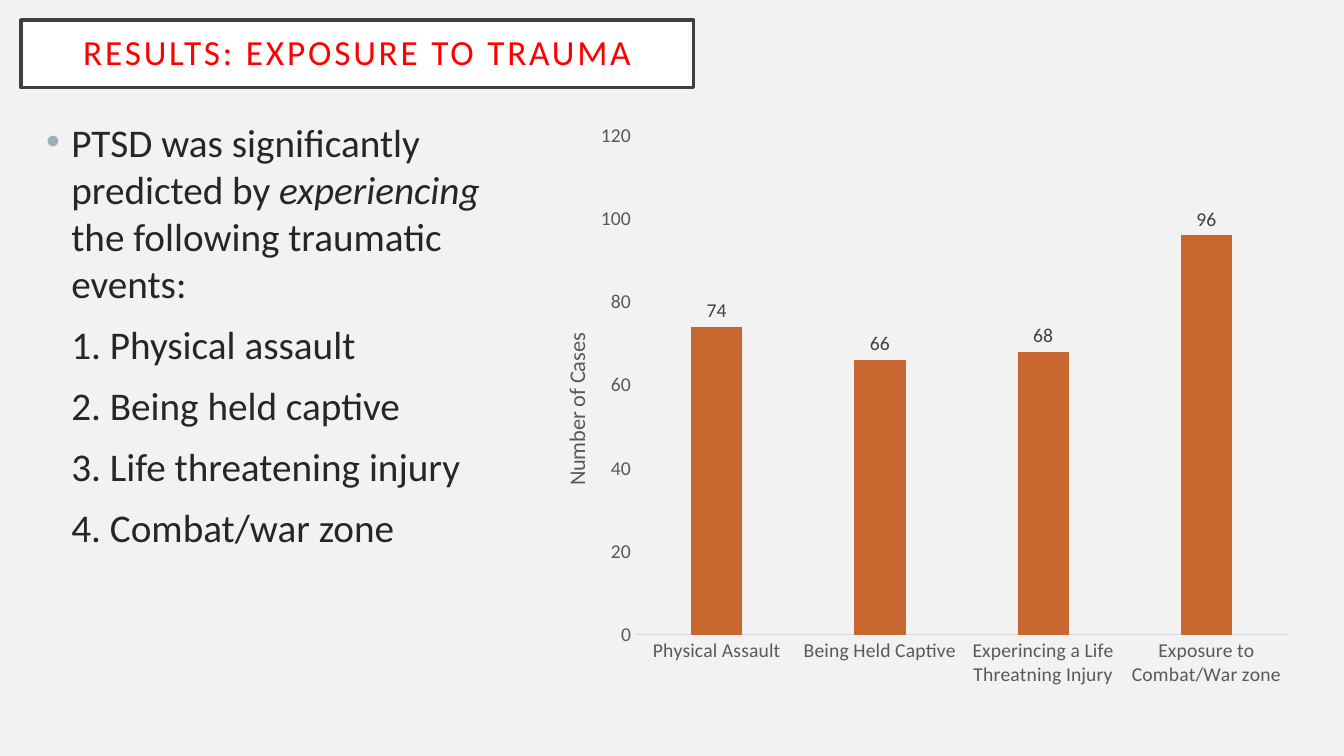
import pptx
import pptx.chart.data
import pptx.dml.color
import pptx.enum.chart
import pptx.enum.text
import pptx.oxml
import pptx.oxml.ns
import pptx.util

PX = 9144  # 100 px to the inch
FONT = "Calibri"
COLORS = {
    "background": "F2F2F2", "white": "FFFFFF", "frame": "404040",
    "title": "FF0000", "body": "262626", "bullet": "9BAFB5",
    "axis": "595959", "axis_line": "D9D9D9", "bar": "C96731",
}
CASES = {
    "Physical Assault": 74,
    "Being Held Captive": 66,
    "Experincing a Life Threatning Injury": 68,
    "Exposure to Combat/War zone": 96,
}
EVENTS = ["Physical assault", "Being held captive",
          "Life threatening injury", "Combat/war zone"]


def px(*lengths):
    return [round(length * PX) for length in lengths]


def rgb(name):
    return pptx.dml.color.RGBColor.from_string(COLORS[name])


def set_font(font, size, color):
    font.name = FONT
    font.size = pptx.util.Pt(size)
    font.bold = False
    font.color.rgb = rgb(color)


def set_layout(element, **fractions):
    """Fix a chart part at fractions of the chart's size."""
    qn = pptx.oxml.ns.qn
    layout = element.find(qn("c:layout"))
    if layout is None:
        layout = pptx.oxml.parse_xml(
            f"<c:layout {pptx.oxml.ns.nsdecls('c')}/>")
        tx = element.find(qn("c:tx"))
        if tx is None:
            element.insert(0, layout)
        else:
            tx.addnext(layout)
    manual = layout.makeelement(qn("c:manualLayout"), {})
    layout.append(manual)
    settings = {"xMode": "edge", "yMode": "edge", **fractions}
    if "w" in fractions:
        settings = {"layoutTarget": "inner", **settings}
    for tag, value in settings.items():
        manual.append(manual.makeelement(qn(f"c:{tag}"), {"val": str(value)}))


def add_title(s, box):
    sp = s.shapes.title
    sp.left, sp.top, sp.width, sp.height = px(*box)
    sp.fill.solid()
    sp.fill.fore_color.rgb = rgb("white")
    sp.line.color.rgb = rgb("frame")
    sp.line.width = pptx.util.Pt(2.5)
    tf = sp.text_frame
    tf.text = "RESULTS: EXPOSURE TO TRAUMA"
    tf.word_wrap = True
    tf.auto_size = pptx.enum.text.MSO_AUTO_SIZE.NONE
    tf.vertical_anchor = pptx.enum.text.MSO_ANCHOR.MIDDLE
    inset, = px(20)
    tf.margin_left = tf.margin_right = inset
    tf.margin_top = tf.margin_bottom = inset
    p = tf.paragraphs[0]
    p.alignment = pptx.enum.text.PP_ALIGN.CENTER
    p.line_spacing = 0.9
    r = p.runs[0]
    set_font(r.font, 25.2, "title")
    r.font._element.set("spc", "200")


def add_findings(s, box):
    tf = s.shapes.add_textbox(*px(*box)).text_frame
    tf.word_wrap = True
    lead = tf.paragraphs[0]
    for text, italic in [("PTSD was significantly predicted by ", None),
                         ("experiencing ", True),
                         ("the following traumatic events:", None)]:
        r = lead.add_run()
        r.text = text
        r.font.italic = italic
    for number, event in enumerate(EVENTS, 1):
        tf.add_paragraph().text = f"{number}. {event}"

    indent, = px(25)
    for p in tf.paragraphs:
        set_font(p.font, 28, "body")
        p.space_before = pptx.util.Pt(10)
        p._p.get_or_add_pPr().set("marL", str(indent))
    pPr = lead._p.pPr
    pPr.set("indent", str(-indent))
    ns = pptx.oxml.ns.nsdecls("a")
    bullet = [
        f'<a:buClr {ns}><a:srgbClr val="{COLORS["bullet"]}"/></a:buClr>',
        f'<a:buFont {ns} typeface="Arial"/>',
        f'<a:buChar {ns} char="•"/>',
    ]
    for xml in bullet:
        pPr.find(pptx.oxml.ns.qn("a:defRPr")).addprevious(
            pptx.oxml.parse_xml(xml))


def add_cases_chart(s, box):
    data = pptx.chart.data.CategoryChartData()
    data.categories = list(CASES)
    data.add_series("Series 1", list(CASES.values()))
    kind = pptx.enum.chart.XL_CHART_TYPE.COLUMN_CLUSTERED
    chart = s.shapes.add_chart(kind, *px(*box), data).chart
    chart.has_title = False
    chart.has_legend = False
    chart.font.name = FONT
    chart.font.size = pptx.util.Pt(10)

    plot = chart.plots[0]
    plot.vary_by_categories = False
    plot.gap_width = 219
    plot.overlap = -27
    bars = plot.series[0]
    bars.format.fill.solid()
    bars.format.fill.fore_color.rgb = rgb("bar")
    labels = bars.data_labels
    labels.show_value = True
    labels.position = pptx.enum.chart.XL_LABEL_POSITION.OUTSIDE_END
    set_font(labels.font, 14, "frame")

    for axis in (chart.category_axis, chart.value_axis):
        axis.has_major_gridlines = False
        axis.major_tick_mark = pptx.enum.chart.XL_TICK_MARK.NONE
        axis.minor_tick_mark = pptx.enum.chart.XL_TICK_MARK.NONE
        set_font(axis.tick_labels.font, 14, "axis")
    line = chart.category_axis.format.line
    line.color.rgb = rgb("axis_line")
    line.width = pptx.util.Pt(0.75)

    values = chart.value_axis
    values.minimum_scale, values.maximum_scale = 0, 120
    values.major_unit = 20
    values.format.line.fill.background()
    title = values.axis_title
    tf = title.text_frame
    tf.text = "Number of Cases"
    tf._txBody.bodyPr.set("rot", "-5400000")
    tf._txBody.bodyPr.set("vert", "horz")
    set_font(tf.paragraphs[0].runs[0].font, 16, "axis")

    set_layout(title._element, x=0.04, y=0.37)
    plot_area = chart._chartSpace.chart.plotArea
    set_layout(plot_area, x=0.14, y=0.04, w=0.84, h=0.85)


def main():
    prs = pptx.Presentation()
    prs.slide_width, prs.slide_height = px(1333, 750)
    s = prs.slides.add_slide(prs.slide_layouts[5])
    s.background.fill.solid()
    s.background.fill.fore_color.rgb = rgb("background")
    add_title(s, (21, 20, 667, 67))
    add_findings(s, (36, 112, 473, 520))
    add_cases_chart(s, (522, 111, 771, 583))
    prs.save("out.pptx")


if __name__ == "__main__":
    main()
